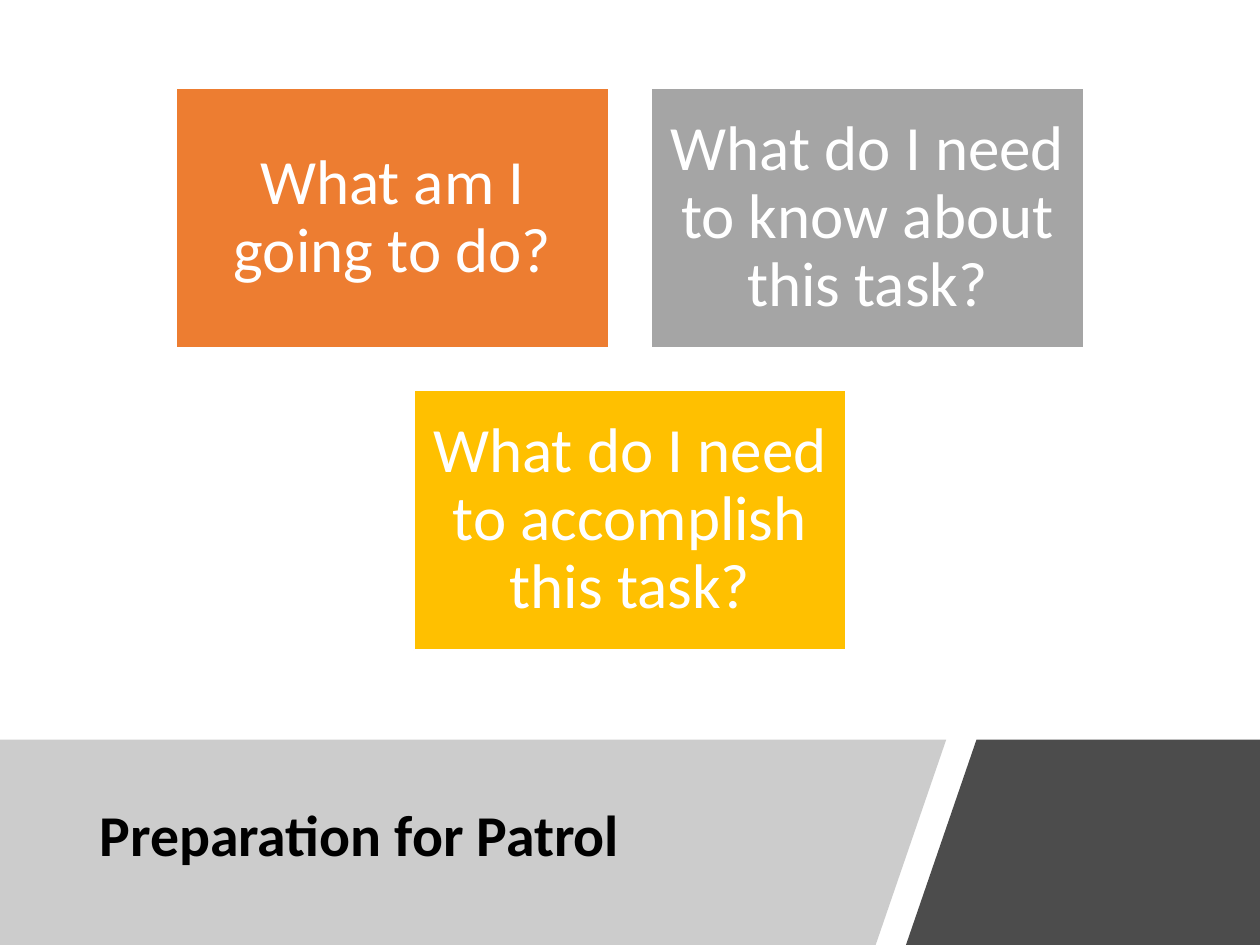
"""Build the patrol preparation slide with three question cards and a title band."""
from lxml import etree
from pptx import Presentation, util as u
from pptx.dml.color import RGBColor
from pptx.enum import shapes, text
from pptx.oxml import ns

WHITE = RGBColor(0xFF, 0xFF, 0xFF)
BLACK = RGBColor(0, 0, 0)
GRAY = RGBColor(0x80, 0x80, 0x80)
ORANGE = RGBColor(0xED, 0x7D, 0x31)
SILVER = RGBColor(0xA5, 0xA5, 0xA5)
GOLD = RGBColor(0xFF, 0xC0, 0x00)

TITLE = "Preparation for Patrol"
ROWS = [
    [("What am I going to do?", ORANGE),
     ("What do I need to know about this task?", SILVER)],
    [("What do I need to accomplish this task?", GOLD)],
]
WIDE, HIGH = 10, 7.5
CARD_W, CARD_H, GAP, TOP = 3.43, 2.06, 0.34, 0.7
BAND = 5.87
BANDS = [
    ([(0, BAND), (7.51, BAND), (6.95, HIGH), (0, HIGH)], GRAY, 40),
    ([(7.75, BAND), (WIDE, BAND), (WIDE, HIGH), (7.19, HIGH)], BLACK, 70),
]


def write(frame, words, size, color, align, bold=False):
    frame.word_wrap = True
    frame.auto_size = text.MSO_AUTO_SIZE.NONE
    frame.vertical_anchor = text.MSO_ANCHOR.MIDDLE
    para = frame.paragraphs[0]
    para.alignment = align
    para.line_spacing = 0.9
    run = para.add_run()
    run.text = words
    font = run.font
    font.name, font.size, font.bold = "Calibri", u.Pt(size), bold
    font.color.rgb = color


def add_band(slide, points, color, alpha):
    pts = [(u.Inches(x), u.Inches(y)) for x, y in points]
    pen = slide.shapes.build_freeform(*pts[0])
    pen.add_line_segments(pts[1:], close=True)
    band = pen.convert_to_shape()
    band.shadow.inherit = False
    band.fill.solid()
    band.fill.fore_color.rgb = color
    band.line.fill.background()
    tint = band._element.spPr.find(".//" + ns.qn("a:srgbClr"))
    etree.SubElement(tint, ns.qn("a:alpha"), val=str(alpha * 1000))
    slide.shapes._spTree.insert(2, band._element)


def add_card(slide, left, top, words, color):
    box = [u.Inches(n) for n in (left, top, CARD_W, CARD_H)]
    card = slide.shapes.add_shape(shapes.MSO_SHAPE.RECTANGLE, *box)
    card.shadow.inherit = False
    card.fill.solid()
    card.fill.fore_color.rgb = color
    card.line.color.rgb = WHITE
    card.line.width = u.Pt(1)
    frame = card.text_frame
    frame.margin_left = frame.margin_right = u.Inches(0.15)
    frame.margin_top = frame.margin_bottom = u.Inches(0.15)
    write(frame, words, 36, WHITE, text.PP_ALIGN.CENTER)


def main():
    deck = Presentation()
    deck.slide_width, deck.slide_height = u.Inches(WIDE), u.Inches(HIGH)
    slide = deck.slides.add_slide(deck.slide_layouts[5])
    for band in BANDS:
        add_band(slide, *band)
    title = slide.shapes.title
    title.left, title.top = u.Inches(0.69), u.Inches(6.05)
    title.width, title.height = u.Inches(6.33), u.Inches(1.2)
    write(title.text_frame, TITLE, 33, BLACK, text.PP_ALIGN.LEFT, True)
    for r, row in enumerate(ROWS):
        span = len(row) * (CARD_W + GAP) - GAP
        for c, (words, color) in enumerate(row):
            left = (WIDE - span) / 2 + c * (CARD_W + GAP)
            add_card(slide, left, TOP + r * (CARD_H + GAP), words, color)
    deck.save("out.pptx")


if __name__ == "__main__":
    main()
